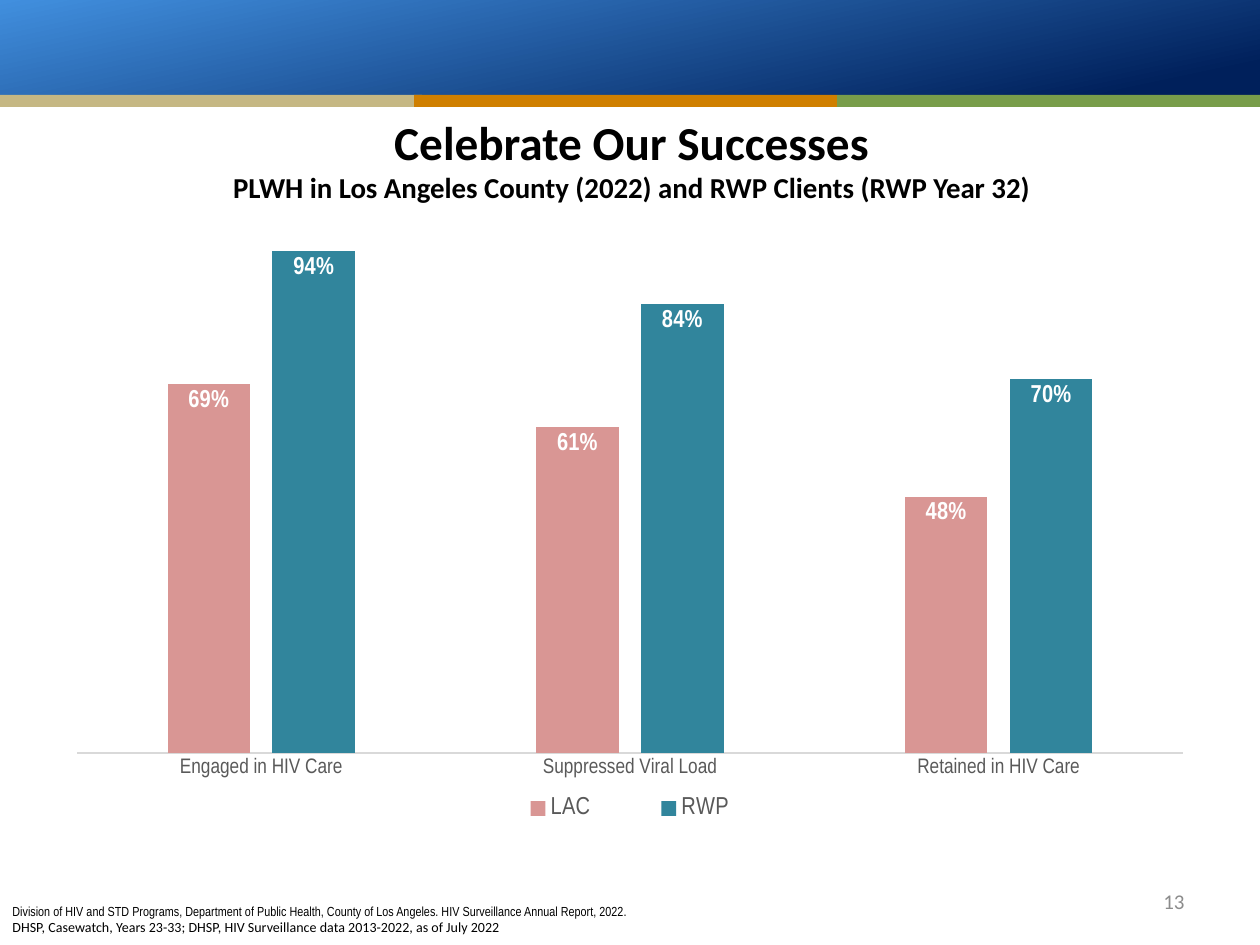
from dataclasses import dataclass

from lxml import etree
from pptx import Presentation
from pptx import util as u
from pptx.chart.data import CategoryChartData
from pptx.dml.color import RGBColor
from pptx.enum import chart as ch
from pptx.enum import shapes, text
from pptx.oxml.ns import qn

EMU_PER_PX = 914400 / 126

BLACK = RGBColor(0x00, 0x00, 0x00)
WHITE = RGBColor(0xFF, 0xFF, 0xFF)
NAVY = RGBColor(0x00, 0x20, 0x5B)
SKY = RGBColor(0x41, 0x8F, 0xDE)
SAND = RGBColor(0xC5, 0xB7, 0x83)
ORANGE = RGBColor(0xCF, 0x7F, 0x00)
GREEN = RGBColor(0x78, 0x9D, 0x4A)
ROSE = RGBColor(0xD9, 0x96, 0x94)
TEAL = RGBColor(0x31, 0x85, 0x9C)
LABEL_GRAY = RGBColor(0x59, 0x59, 0x59)
AXIS_GRAY = RGBColor(0xD9, 0xD9, 0xD9)
NUMBER_GRAY = RGBColor(0x8C, 0x8C, 0x8C)

HEADING_FONT = "Calibri"
CHART_FONT = "Arial Narrow"


@dataclass(frozen=True)
class Box:
    left: int
    top: int
    width: int
    height: int

    def emu(self) -> tuple[int, ...]:
        return tuple(px(n) for n in (self.left, self.top, self.width, self.height))


@dataclass(frozen=True)
class Group:
    name: str
    rates: tuple[float, ...]
    color: RGBColor


STAGES = ("Engaged in HIV Care", "Suppressed Viral Load", "Retained in HIV Care")
GROUPS = (
    Group("LAC", (0.69, 0.61, 0.48), ROSE),
    Group("RWP", (0.94, 0.84, 0.70), TEAL),
)
CHART_BOX = Box(54, 207, 1153, 627)
PLOT_BOX = Box(77, 219, 1106, 534)
LEGEND_BOX = Box(468, 792, 324, 33)


def px(n: int) -> int:
    return round(n * EMU_PER_PX)


def style_font(font, *, size: float, color: RGBColor = BLACK,
               name: str = CHART_FONT, bold: bool = False) -> None:
    font.size, font.name, font.bold = u.Pt(size), name, bold
    font.color.rgb = color


def add_text(paragraph, words: str, *, align=text.PP_ALIGN.LEFT, **style) -> None:
    paragraph.alignment = align
    run = paragraph.add_run()
    run.text = words
    style_font(run.font, **style)


def add_text_box(slide, box: Box, anchor=text.MSO_ANCHOR.TOP):
    frame = slide.shapes.add_textbox(*box.emu()).text_frame
    frame.word_wrap = True
    frame.vertical_anchor = anchor
    return frame


def add_band(slide, box: Box):
    band = slide.shapes.add_shape(shapes.MSO_SHAPE.RECTANGLE, *box.emu())
    band.shadow.inherit = False
    band.line.fill.background()
    return band


def add_header(slide) -> None:
    fill = add_band(slide, Box(0, 0, 1261, 97)).fill
    fill.gradient()
    fill.gradient_angle = 102
    for stop, position, color in zip(fill.gradient_stops, (0.09, 1), (NAVY, SKY)):
        stop.position = position
        stop.color.rgb = color
    for left, color in ((-1, SAND), (414, ORANGE), (837, GREEN)):
        stripe = add_band(slide, Box(left, 95, 423, 12))
        stripe.fill.solid()
        stripe.fill.fore_color.rgb = color


def add_title(slide) -> None:
    title = slide.shapes.title
    title.left, title.top, title.width, title.height = Box(174, 111, 915, 96).emu()
    title.text_frame.vertical_anchor = text.MSO_ANCHOR.MIDDLE
    heading = title.text_frame.paragraphs[0]
    style = dict(align=text.PP_ALIGN.CENTER, name=HEADING_FONT, bold=True)
    add_text(heading, "Celebrate Our Successes", size=27, **style)
    heading.add_line_break()
    add_text(heading, "PLWH in Los Angeles County (2022) and RWP Clients (RWP Year 32)",
             size=16.5, **style)


def set_layout(element, box: Box, inner: bool = False) -> None:
    """Fix a chart part at a place given in slide px."""
    layout = element.find(qn("c:layout"))
    if layout is None:
        layout = etree.Element(qn("c:layout"))
        before = element.find(qn("c:legendPos"))
        if before is None:
            element.insert(0, layout)
        else:
            before.addnext(layout)
    manual = etree.SubElement(layout, qn("c:manualLayout"))
    settings = [("layoutTarget", "inner")] if inner else []
    settings += [
        ("xMode", "edge"), ("yMode", "edge"),
        ("x", (box.left - CHART_BOX.left) / CHART_BOX.width),
        ("y", (box.top - CHART_BOX.top) / CHART_BOX.height),
        ("w", box.width / CHART_BOX.width),
        ("h", box.height / CHART_BOX.height),
    ]
    for tag, value in settings:
        etree.SubElement(manual, qn(f"c:{tag}")).set("val", str(value))


def add_care_chart(slide) -> None:
    data = CategoryChartData(number_format="0%")
    data.categories = STAGES
    for group in GROUPS:
        data.add_series(group.name, group.rates)
    chart = slide.shapes.add_chart(
        ch.XL_CHART_TYPE.COLUMN_CLUSTERED, *CHART_BOX.emu(), data).chart
    style_font(chart.font, size=14)
    chart.has_title = False

    plot = chart.plots[0]
    plot.gap_width, plot.overlap = 219, -27
    plot.vary_by_categories = False
    for group, series in zip(GROUPS, plot.series):
        series.format.fill.solid()
        series.format.fill.fore_color.rgb = group.color
        labels = series.data_labels
        labels.show_value = True
        labels.position = ch.XL_LABEL_POSITION.INSIDE_END
        labels.number_format, labels.number_format_is_linked = "0%", False
        style_font(labels.font, size=14, color=WHITE, bold=True)

    stage_axis = chart.category_axis
    stage_axis.major_tick_mark = ch.XL_TICK_MARK.NONE
    stage_axis.format.line.color.rgb = AXIS_GRAY
    stage_axis.format.line.width = u.Pt(0.75)
    style_font(stage_axis.tick_labels.font, size=12, color=LABEL_GRAY)

    rate_axis = chart.value_axis
    rate_axis.minimum_scale, rate_axis.maximum_scale = 0, 1
    rate_axis.major_unit = 0.2
    rate_axis.has_major_gridlines = False
    rate_axis.visible = False

    chart.has_legend = True
    chart.legend.position = ch.XL_LEGEND_POSITION.BOTTOM
    chart.legend.include_in_layout = False
    style_font(chart.legend.font, size=14, color=LABEL_GRAY)
    plot_area = chart.element.find(".//" + qn("c:plotArea"))
    set_layout(plot_area, PLOT_BOX, inner=True)
    set_layout(chart.element.find(".//" + qn("c:legend")), LEGEND_BOX)


def add_footer(slide) -> None:
    number = add_text_box(slide, Box(1124, 876, 73, 50), text.MSO_ANCHOR.MIDDLE)
    add_text(number.paragraphs[0], "13", align=text.PP_ALIGN.RIGHT,
             size=12, color=NUMBER_GRAY, name=HEADING_FONT)
    sources = add_text_box(slide, Box(0, 897, 740, 47))
    add_text(sources.paragraphs[0],
             "Division of HIV and STD Programs, Department of Public Health, "
             "County of Los Angeles. HIV Surveillance Annual Report, 2022.", size=7.5)
    add_text(sources.add_paragraph(),
             "DHSP, Casewatch, Years 23-33; DHSP, HIV Surveillance data 2013-2022, "
             "as of July 2022", size=8, name=HEADING_FONT)


def main() -> None:
    deck = Presentation()
    deck.slide_width, deck.slide_height = px(1260), px(945)
    slide = deck.slides.add_slide(deck.slide_layouts[5])
    add_header(slide)
    add_title(slide)
    add_care_chart(slide)
    add_footer(slide)
    deck.save("out.pptx")


if __name__ == "__main__":
    main()
